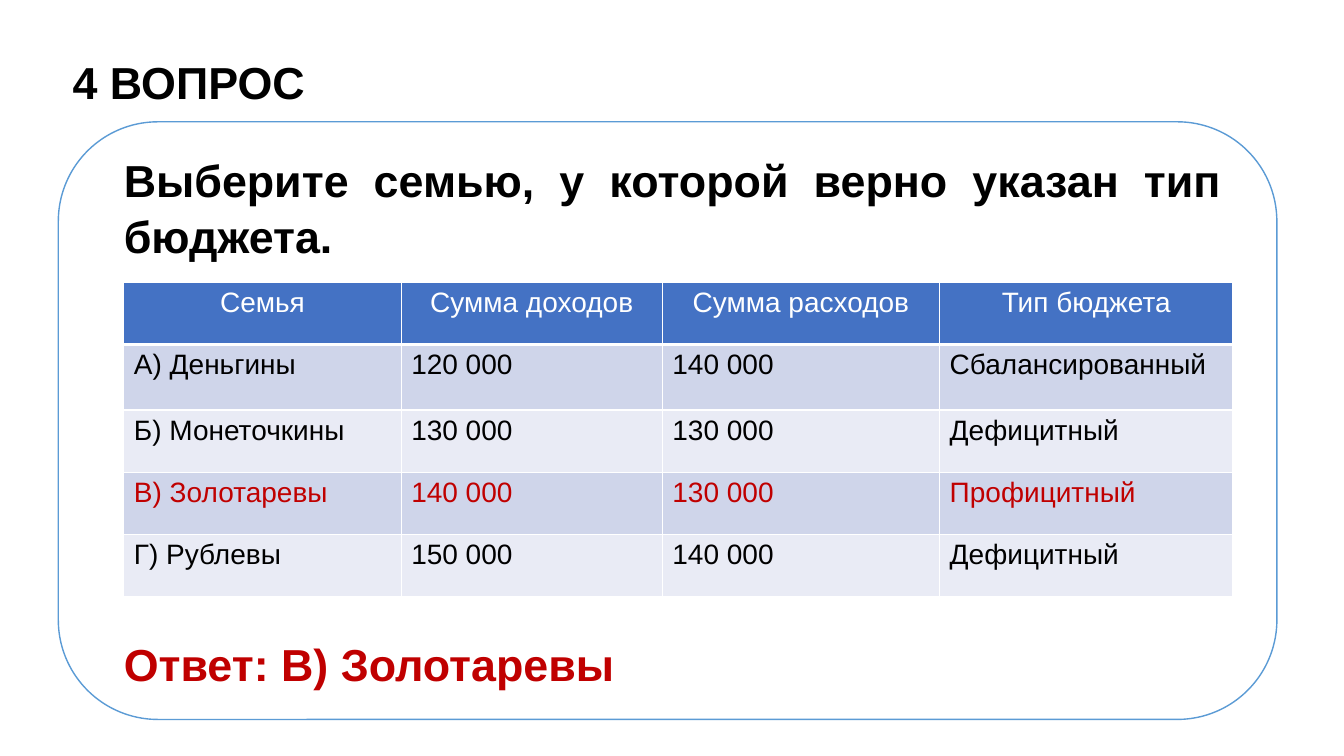
from dataclasses import dataclass

from lxml import etree
from pptx import Presentation
from pptx.dml.color import RGBColor
from pptx.enum.shapes import MSO_SHAPE
from pptx.enum.text import MSO_ANCHOR, MSO_AUTO_SIZE, PP_ALIGN
from pptx.oxml.ns import qn
from pptx.util import Cm, Pt

LEFT, CENTER, JUSTIFY = PP_ALIGN.LEFT, PP_ALIGN.CENTER, PP_ALIGN.JUSTIFY
TOP = MSO_ANCHOR.TOP
NO_AUTOFIT = MSO_AUTO_SIZE.NONE
ROUNDED = MSO_SHAPE.ROUNDED_RECTANGLE

FONT = "Arial"
BLACK, WHITE, RED = "000000", "FFFFFF", "C00000"
OUTLINE, HEADER_FILL = "5B9BD5", "4472C4"
BAND_FILLS = ("CFD5EA", "E9EBF5")

COLUMN_WIDTHS = (6.99, 6.58, 6.99, 7.39)
ROW_HEIGHTS = (1.57, 1.65, 1.57, 1.57, 1.57)


@dataclass
class Family:
    name: str
    income: str
    expenses: str
    budget: str
    color: str = BLACK

    def values(self) -> tuple[str, ...]:
        return self.name, self.income, self.expenses, self.budget


@dataclass
class Statement:
    text: str
    top: float
    height: float
    color: str


HEADINGS = ("Семья", "Сумма доходов", "Сумма расходов", "Тип бюджета")
FAMILIES = (
    Family("А) Деньгины", "120 000", "140 000", "Сбалансированный"),
    Family("Б) Монеточкины", "130 000", "130 000", "Дефицитный"),
    Family("В) Золотаревы", "140 000", "130 000", "Профицитный", RED),
    Family("Г) Рублевы", "150 000", "140 000", "Дефицитный"),
)
STATEMENTS = (
    Statement("Выберите семью, у которой верно указан тип бюджета.", 3.53, 3.2, BLACK),
    Statement("Ответ: В) Золотаревы", 15.72, 1.9, RED),
)


def rgb(color: str) -> RGBColor:
    return RGBColor.from_string(color)


def write(frame, text: str, size: int, color: str, align, bold: bool = False):
    frame.text = text
    para = frame.paragraphs[0]
    para.alignment = align
    font = para.font
    font.name, font.size, font.bold = FONT, Pt(size), bold
    font.color.rgb = rgb(color)
    return para


def add_title(page) -> None:
    title = page.shapes.title
    title.left, title.top, title.width, title.height = Cm(1.83), Cm(1.17), Cm(25.73), Cm(1.83)
    frame = title.text_frame
    frame.margin_left = frame.margin_top = 0
    frame.margin_right = frame.margin_bottom = Cm(0.25)
    frame.vertical_anchor = TOP
    frame.auto_size = NO_AUTOFIT
    write(frame, "4 ВОПРОС", 32, BLACK, LEFT, bold=True).line_spacing = 1.15


def add_panel(page) -> None:
    panel = page.shapes.add_shape(ROUNDED, Cm(1.47), Cm(3.07), Cm(30.71), Cm(15.06))
    panel.shadow.inherit = False
    panel.fill.solid()
    panel.fill.fore_color.rgb = rgb(WHITE)
    panel.line.color.rgb = rgb(OUTLINE)
    panel.line.width = Pt(1)


def add_statement(page, statement: Statement) -> None:
    box = page.shapes.add_textbox(Cm(2.87), Cm(statement.top), Cm(28.17), Cm(statement.height))
    frame = box.text_frame
    frame.word_wrap = True
    frame.margin_top = frame.margin_bottom = Cm(0.25)
    write(frame, statement.text, 32, statement.color, JUSTIFY, bold=True).line_spacing = 1.05


def add_borders(cell, bottom: int) -> None:
    """Give the cell white borders; call before the cell is filled."""
    properties = cell._tc.get_or_add_tcPr()
    for side, width in (("L", 1), ("R", 1), ("T", 1), ("B", bottom)):
        line = etree.SubElement(properties, qn(f"a:ln{side}"), w=str(Pt(width)))
        fill = etree.SubElement(line, qn("a:solidFill"))
        etree.SubElement(fill, qn("a:srgbClr"), val=WHITE)


def fill_row(row, values: tuple[str, ...], fill: str, color: str, align, bottom: int = 1) -> None:
    for cell, value in zip(row.cells, values):
        add_borders(cell, bottom)
        cell.fill.solid()
        cell.fill.fore_color.rgb = rgb(fill)
        write(cell.text_frame, value, 20, color, align)


def add_budget_table(page) -> None:
    table = page.shapes.add_table(
        len(ROW_HEIGHTS), len(COLUMN_WIDTHS), Cm(3.12), Cm(7.11),
        Cm(sum(COLUMN_WIDTHS)), Cm(sum(ROW_HEIGHTS))).table
    for column, width in zip(table.columns, COLUMN_WIDTHS):
        column.width = Cm(width)
    for row, height in zip(table.rows, ROW_HEIGHTS):
        row.height = Cm(height)
    fill_row(table.rows[0], HEADINGS, HEADER_FILL, WHITE, CENTER, bottom=3)
    for index, family in enumerate(FAMILIES):
        fill_row(table.rows[index + 1], family.values(), BAND_FILLS[index % 2], family.color, LEFT)


def main() -> None:
    deck = Presentation()
    deck.slide_width, deck.slide_height = Cm(33.87), Cm(19.05)
    page = deck.slides.add_slide(deck.slide_layouts[5])
    add_title(page)
    add_panel(page)
    for statement in STATEMENTS:
        add_statement(page, statement)
    add_budget_table(page)
    deck.save("out.pptx")


if __name__ == "__main__":
    main()
